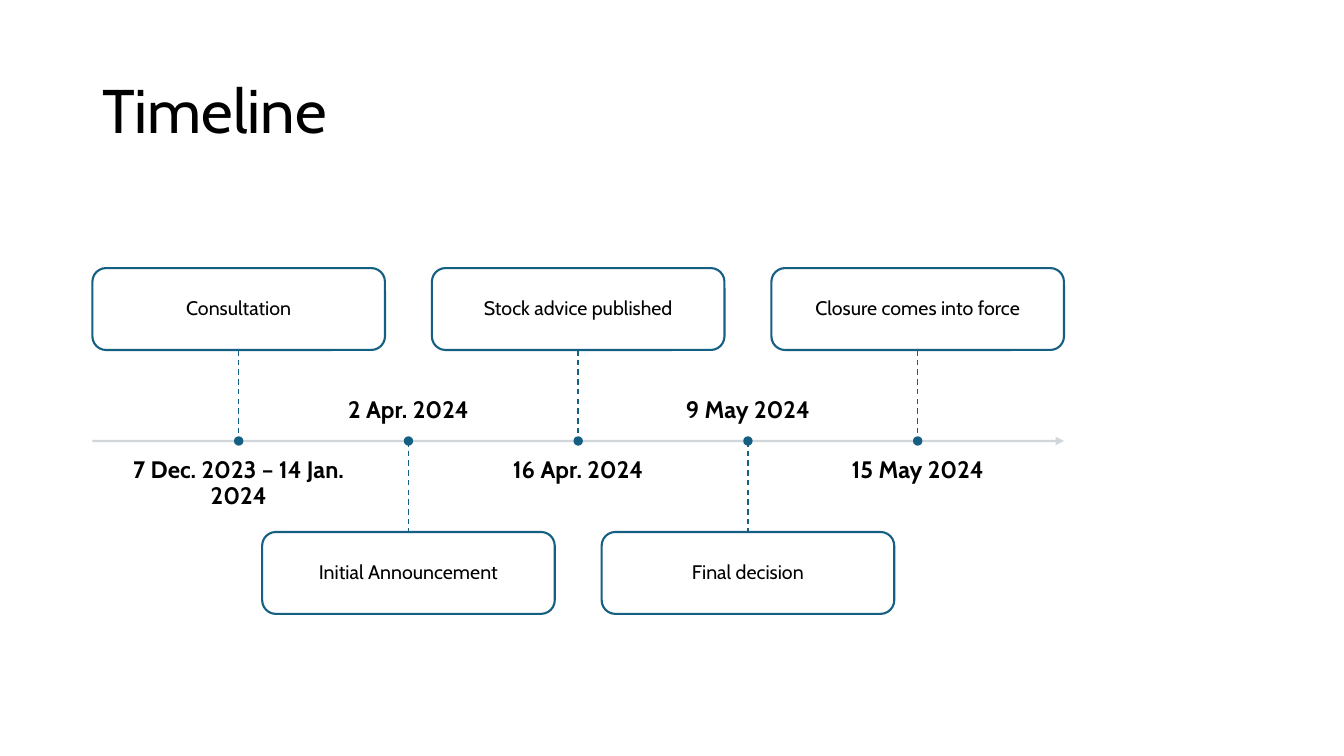
from dataclasses import dataclass

from lxml import etree
from pptx import Presentation
from pptx.dml.color import RGBColor
from pptx.enum.dml import MSO_LINE
from pptx.enum.shapes import MSO_CONNECTOR, MSO_SHAPE
from pptx.enum.text import MSO_ANCHOR, PP_ALIGN
from pptx.oxml.ns import qn
from pptx.util import Pt

ROUND, OVAL = MSO_SHAPE.ROUNDED_RECTANGLE, MSO_SHAPE.OVAL
TOP, MID, LOW = MSO_ANCHOR.TOP, MSO_ANCHOR.MIDDLE, MSO_ANCHOR.BOTTOM
LEFT, CENTER = PP_ALIGN.LEFT, PP_ALIGN.CENTER
DASH = MSO_LINE.DASH
STRAIGHT = MSO_CONNECTOR.STRAIGHT


@dataclass(frozen=True)
class Theme:
    font: str = "Cabin"
    ink: RGBColor = RGBColor(0, 0, 0)
    paper: RGBColor = RGBColor(255, 255, 255)
    blue: RGBColor = RGBColor(0x15, 0x60, 0x82)
    gray: RGBColor = RGBColor(0xCC, 0xD2, 0xD8)
    title: int = 44
    date: int = 17
    label: int = 14
    alpha: str = "90000"


theme = Theme()


def write(frame, text, size, bold=False, align=CENTER, anchor=MID, inset=0):
    frame.word_wrap = True
    frame.vertical_anchor = anchor
    frame.margin_left = frame.margin_right = Pt(inset)
    frame.margin_top = frame.margin_bottom = Pt(inset)
    para = frame.paragraphs[0]
    para.alignment = align
    para.line_spacing = 0.9
    run = para.add_run()
    run.text = text
    run.font.name = theme.font
    run.font.size = Pt(size)
    run.font.bold = bold
    run.font.color.rgb = theme.ink


def rule(x1, y1, x2, y2, color, width):
    line = slide.shapes.add_connector(STRAIGHT, Pt(x1), Pt(y1), Pt(x2), Pt(y2))
    line.line.color.rgb = color
    line.line.width = Pt(width)
    etree.SubElement(line._element.spPr, qn("a:effectLst"))
    return line


deck = Presentation()
deck.slide_width, deck.slide_height = Pt(960), Pt(540)
slide = deck.slides.add_slide(deck.slide_layouts[5])

# Title
title = slide.shapes.title
title.left, title.top, title.width, title.height = Pt(66), Pt(28.75), Pt(828), Pt(104.4)
write(title.text_frame, "Timeline", theme.title, align=LEFT, inset=7.2)

# Time axis with arrowhead
start, end, axis = 66, 760, 315
arrow = rule(start, axis, end, axis, theme.gray, 1.5)
ln = arrow.line._get_or_add_ln()
etree.SubElement(ln, qn("a:tailEnd"), type="triangle")
etree.SubElement(ln.find(".//" + qn("a:srgbClr")), qn("a:alpha"), val=theme.alpha)

# Events alternate above and below the axis
events = [
    ("7 Dec. 2023 – 14 Jan. 2024", "Consultation"),
    ("2 Apr. 2024", "Initial Announcement"),
    ("16 Apr. 2024", "Stock advice published"),
    ("9 May 2024", "Final decision"),
    ("15 May 2024", "Closure comes into force"),
]
wide, high = 209, 58.5
step = (end - start - wide) / (len(events) - 1)
gap = 65
span, tall, away = 183.6, 39, 12.5
dot = 5.2

for i, (date, label) in enumerate(events):
    mid = start + wide / 2 + i * step
    above = i % 2 == 0
    top = axis - gap - high if above else axis + gap
    near = top + high if above else top

    # Label box
    box = slide.shapes.add_shape(ROUND, Pt(mid - wide / 2), Pt(top), Pt(wide), Pt(high))
    box.shadow.inherit = False
    box.fill.solid()
    box.fill.fore_color.rgb = theme.paper
    tint = box._element.spPr.find(qn("a:solidFill"))[0]
    etree.SubElement(tint, qn("a:alpha"), val=theme.alpha)
    box.line.color.rgb = theme.blue
    box.line.width = Pt(1.5)
    write(box.text_frame, label, theme.label, inset=10)

    # Dashed stem
    stem = rule(mid, min(near, axis), mid, max(near, axis), theme.blue, 1)
    stem.line.dash_style = DASH

    # Date on the other side of the axis
    y = axis + away if above else axis - away - tall
    note = slide.shapes.add_textbox(Pt(mid - span / 2), Pt(y), Pt(span), Pt(tall))
    write(note.text_frame, date, theme.date, bold=True, anchor=TOP if above else LOW)

    # Marker
    mark = slide.shapes.add_shape(OVAL, Pt(mid - dot / 2), Pt(axis - dot / 2), Pt(dot), Pt(dot))
    mark.shadow.inherit = False
    mark.fill.solid()
    mark.fill.fore_color.rgb = theme.blue
    mark.line.color.rgb = theme.blue
    mark.line.width = Pt(1.5)

deck.save("out.pptx")
